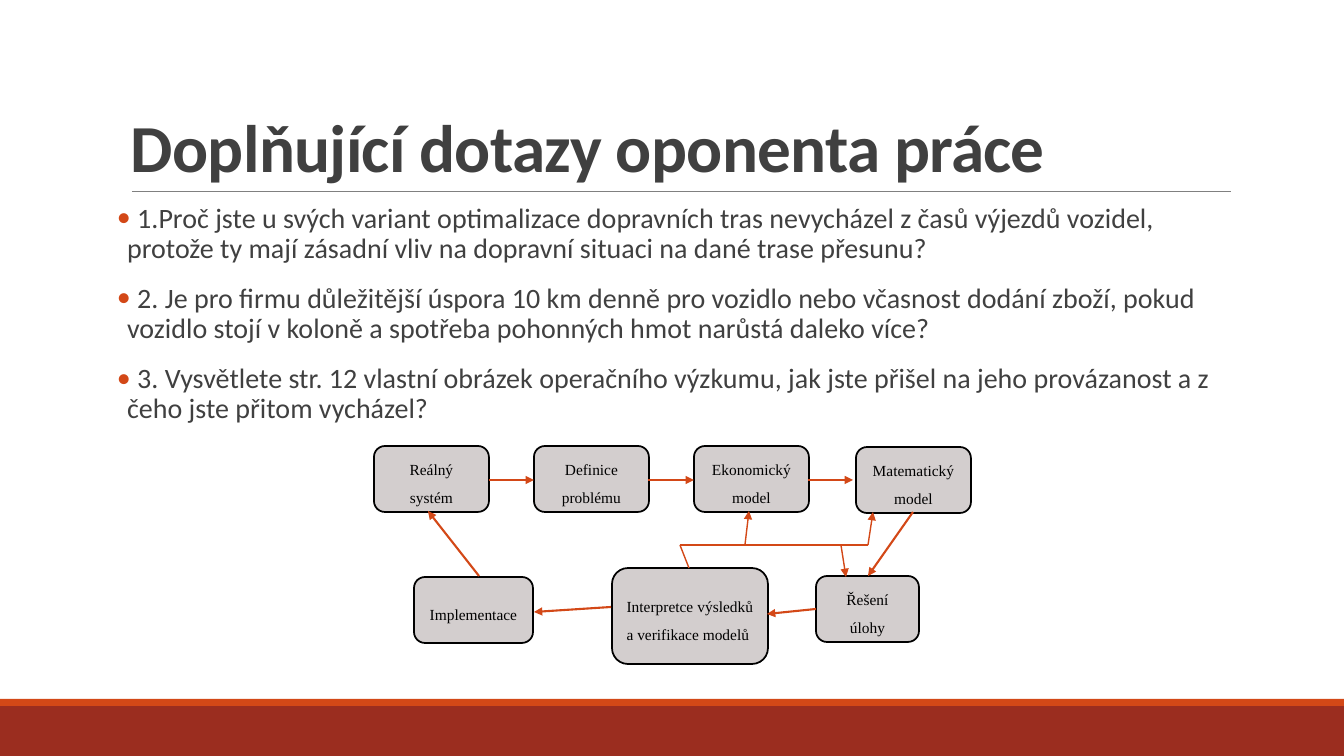
from pptx import Presentation
from pptx import util as u
from pptx.dml.color import RGBColor
from pptx.enum import shapes, text
from pptx.oxml.ns import qn
from lxml import etree

PX = 914400 / 100.8
C = {"band": "9B2D1F", "accent": "D34817", "rule": "808080",
     "text": "404040", "node": "D3CECE", "black": "000000"}

QUESTIONS = [
    " 1.Proč jste u svých variant optimalizace dopravních tras nevycházel z časů výjezdů vozidel, "
    "protože ty mají zásadní vliv na dopravní situaci na dané trase přesunu?",
    " 2. Je pro ﬁrmu důležitější úspora 10 km denně pro vozidlo nebo včasnost dodání zboží, "
    "pokud vozidlo stojí v koloně a spotřeba pohonných hmot narůstá daleko více?",
    " 3. Vysvětlete str. 12 vlastní obrázek operačního výzkumu, jak jste přišel na jeho "
    "provázanost a z čeho jste přitom vycházel?",
]

# Diagram parts, in px from the diagram's corner
CENTER, JUSTIFY = text.PP_ALIGN.CENTER, text.PP_ALIGN.JUSTIFY
NODES = [
    ("Reálný systém", 0, 0, 115, 66, CENTER),
    ("Definice problému", 160, 0, 115, 66, CENTER),
    ("Ekonomický model", 320, 0, 115, 66, CENTER),
    ("Matematický model", 482, 1, 115, 66, CENTER),
    ("Řešení úlohy", 442, 130, 103, 66, CENTER),
    ("Interpretce výsledků a verifikace modelů", 238, 122, 156, 96, JUSTIFY),
    ("Implementace", 40, 131, 119, 66, CENTER),
]
FLOW = [(115, 34, 160, 34), (274, 34, 320, 34), (434, 34, 479, 34),
        (539, 66, 494, 130), (442, 163, 393, 168),
        (237, 161, 160, 166), (105, 130, 54, 65)]
FEEDBACK_LINES = [(315, 122, 306, 99), (306, 99, 494, 99)]
FEEDBACK_ARROWS = [(371, 99, 375, 65), (494, 99, 499, 66), (467, 99, 472, 131)]


def px(*lengths):
    return [u.Emu(round(n * PX)) for n in lengths]


def rgb(name):
    return RGBColor.from_string(C[name])


def add_run(p, words, size, font, color, bold=False):
    r = p.add_run()
    r.text = words
    r.font.size, r.font.name, r.font.bold = u.Pt(size), font, bold
    r.font.color.rgb = rgb(color)
    return r


def add_box(parent, kind, box, fill, line=None, width=1.25):
    sp = parent.add_shape(kind, *px(*box))
    sp.shadow.inherit = False
    sp.fill.solid()
    sp.fill.fore_color.rgb = rgb(fill)
    if line:
        sp.line.color.rgb = rgb(line)
        sp.line.width = u.Pt(width)
    else:
        sp.line.fill.background()
    return sp


def add_line(parent, ends, color, width, arrow=False):
    cx = parent.add_connector(shapes.MSO_CONNECTOR.STRAIGHT, *px(*ends))
    cx.line.color.rgb = rgb(color)
    cx.line.width = u.Pt(width)
    if arrow:
        etree.SubElement(cx.line._get_or_add_ln(), qn("a:tailEnd"), type="triangle")
    etree.SubElement(cx._element.spPr, qn("a:effectLst"))


def add_text_frame(s, box):
    tf = s.shapes.add_textbox(*px(*box)).text_frame
    tf.word_wrap = True
    return tf


def footer(s, x, y, w, h):
    stripe = 7
    add_box(s.shapes, shapes.MSO_SHAPE.RECTANGLE, (x, y + stripe, w, h - stripe), "band")
    add_box(s.shapes, shapes.MSO_SHAPE.RECTANGLE, (x, y, w, stripe), "accent")


def title(s, x, y, w, h):
    add_line(s.shapes, (x + 11, y + h, x + w + 1, y + h), "rule", 0.5)
    tf = add_text_frame(s, (x, y, w, h))
    tf.vertical_anchor = text.MSO_ANCHOR.BOTTOM
    p = tf.paragraphs[0]
    p.line_spacing = 0.85
    r = add_run(p, "Doplňující dotazy oponenta práce", 48, "Calibri", "text", True)
    r.font._element.set("spc", "-50")


def questions(s, x, y, w, h):
    tf = add_text_frame(s, (x, y, w, h))
    tf.margin_left = tf.margin_right = 0
    for i, question in enumerate(QUESTIONS):
        p = tf.add_paragraph() if i else tf.paragraphs[0]
        p.line_spacing, p.space_before, p.space_after = 0.9, u.Pt(12), u.Pt(2)
        add_run(p, question, 20, "Calibri", "text")
        # Hanging bullet
        pPr = p._p.get_or_add_pPr()
        pPr.set("marL", str(u.Inches(0.1)))
        pPr.set("indent", str(-u.Inches(0.1)))
        color = etree.SubElement(pPr, qn("a:buClr"))
        etree.SubElement(color, qn("a:srgbClr"), val=C["accent"])
        etree.SubElement(pPr, qn("a:buFont"), typeface="Calibri")
        etree.SubElement(pPr, qn("a:buChar"), char="•")


def diagram(s, x, y):
    group = s.shapes.add_group_shape().shapes
    for label, left, top, w, h, align in NODES:
        sp = add_box(group, shapes.MSO_SHAPE.ROUNDED_RECTANGLE,
                     (x + left, y + top, w, h), "node", "black")
        tf = sp.text_frame
        tf.word_wrap = True
        tf.vertical_anchor = text.MSO_ANCHOR.MIDDLE
        p = tf.paragraphs[0]
        p.alignment, p.line_spacing, p.space_after = align, 1.5, u.Pt(10)
        add_run(p, label, 11, "Times New Roman", "black")
    # Main cycle, then the thinner feedback branches
    for lines, width, arrow in ((FLOW, 1.5, True), (FEEDBACK_LINES, 1, False),
                                (FEEDBACK_ARROWS, 1, True)):
        for x1, y1, x2, y2 in lines:
            add_line(group, (x + x1, y + y1, x + x2, y + y2), "accent", width, arrow)


def main():
    prs = Presentation()
    prs.slide_width, prs.slide_height = px(1344, 756)
    s = prs.slides.add_slide(prs.slide_layouts[6])
    footer(s, 0, 699, 1344, 57)
    title(s, 121, 31, 1109, 160)
    questions(s, 117, 199, 1109, 444)
    diagram(s, 374, 446)
    prs.save("out.pptx")


if __name__ == "__main__":
    main()
